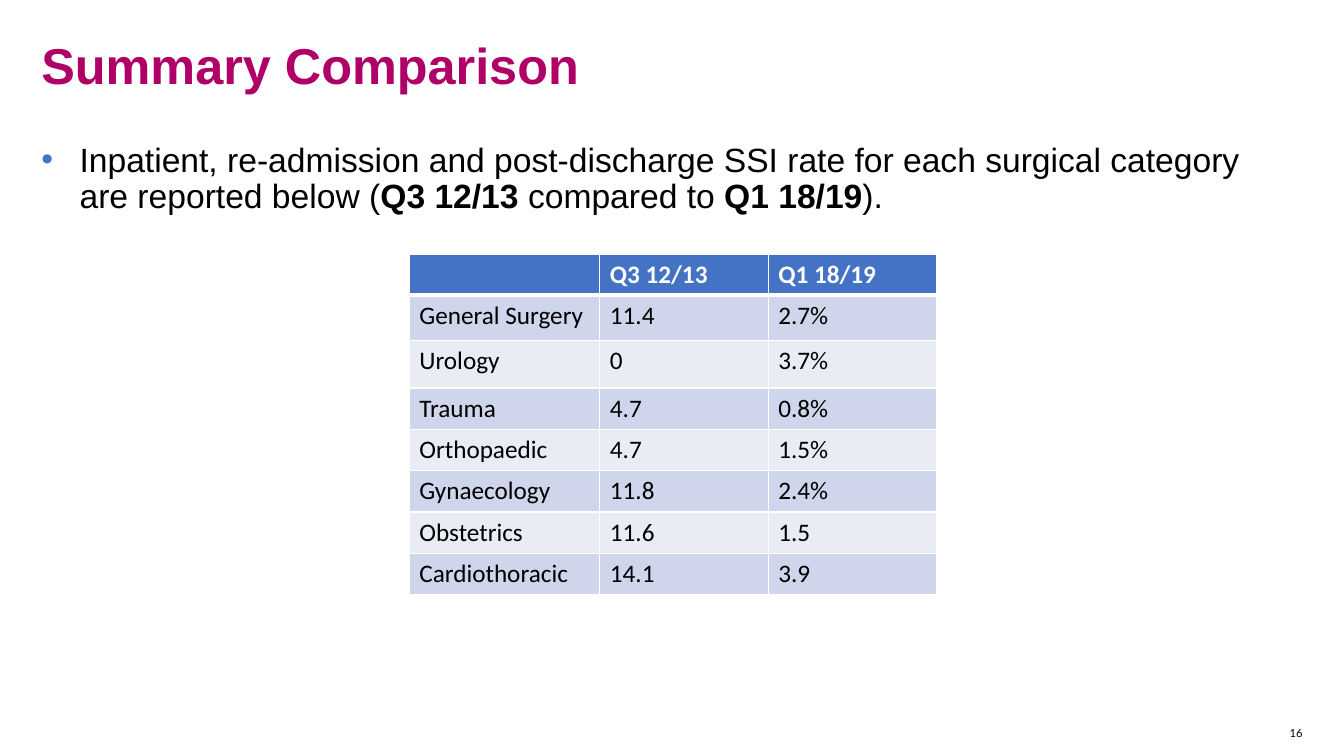
import lxml.etree
import pptx
import pptx.dml.color
import pptx.enum.text
import pptx.oxml.ns
import pptx.util

COLORS = {
    "title": "AE0067",
    "text": "000000",
    "accent": "4472C4",
    "white": "FFFFFF",
    "odd_row": "CFD5EA",
    "even_row": "E9EBF5",
}
TITLE_FONT = {"name": "Arial", "size": pptx.util.Pt(36), "bold": True}
BODY_FONT = {"name": "Arial", "size": pptx.util.Pt(24), "bold": False}
CELL_FONT = {"name": "Calibri", "size": pptx.util.Pt(18), "bold": False}
NUMBER_FONT = {"name": "Lato", "size": pptx.util.Pt(8), "bold": False}

SUMMARY = [
    ("Inpatient, re-admission and post-discharge SSI rate for each surgical category "
     "are reported below (", False),
    ("Q3 12/13 ", True),
    ("compared to ", False),
    ("Q1 18/19", True),
    (").", False),
]
RATES = [
    ("", "Q3 12/13", "Q1 18/19"),
    ("General Surgery", "11.4", "2.7%"),
    ("Urology", "0", "3.7%"),
    ("Trauma", "4.7", "0.8%"),
    ("Orthopaedic", "4.7", "1.5%"),
    ("Gynaecology", "11.8", "2.4%"),
    ("Obstetrics", "11.6", "1.5"),
    ("Cardiothoracic", "14.1", "3.9"),
]
COLUMN_WIDTHS = [1.89, 1.67, 1.67]
ROW_HEIGHTS = [0.41, 0.45, 0.47] + [0.41] * 5


def rgb(name):
    """Return the named colour."""
    return pptx.dml.color.RGBColor.from_string(COLORS[name])


def style_font(font, values, color):
    """Apply a dict of font values and a colour."""
    for attribute, value in values.items():
        setattr(font, attribute, value)
    font.color.rgb = rgb(color)


def inches(box):
    """Convert a box in inches to lengths."""
    return [pptx.util.Inches(value) for value in box]


def prepare_text(shape, box, right_inset=0):
    """Place a text shape and return its first paragraph."""
    shape.left, shape.top, shape.width, shape.height = inches(box)
    frame_format = {
        "margin_left": 0,
        "margin_top": 0,
        "margin_right": pptx.util.Inches(right_inset),
        "margin_bottom": 0,
        "word_wrap": True,
        "auto_size": pptx.enum.text.MSO_AUTO_SIZE.NONE,
        "vertical_anchor": pptx.enum.text.MSO_ANCHOR.TOP,
    }
    for attribute, value in frame_format.items():
        setattr(shape.text_frame, attribute, value)
    return shape.text_frame.paragraphs[0]


def add_child(parent, tag, **attributes):
    """Append a drawing element with the given attributes."""
    child = lxml.etree.SubElement(parent, pptx.oxml.ns.qn(tag))
    for name, value in attributes.items():
        child.set(name, value)
    return child


def add_title(slide, box):
    """Fill the title placeholder."""
    paragraph = prepare_text(slide.shapes.title, box)
    paragraph.alignment = pptx.enum.text.PP_ALIGN.LEFT
    paragraph.line_spacing = 0.9
    run = paragraph.add_run()
    run.text = "Summary Comparison"
    style_font(run.font, TITLE_FONT, "title")


def add_summary(slide, box):
    """Fill the body placeholder with the bulleted summary."""
    paragraph = prepare_text(slide.placeholders[1], box, right_inset=0.2)
    properties = paragraph._p.get_or_add_pPr()
    indent = pptx.util.Inches(0.38)
    properties.set("marL", str(indent))
    properties.set("indent", str(-indent))
    bullet_color = add_child(properties, "a:buClr")
    add_child(bullet_color, "a:srgbClr", val=COLORS["accent"])
    add_child(properties, "a:buFont", typeface="Arial")
    add_child(properties, "a:buChar", char="•")
    paragraph.line_spacing = 0.9
    paragraph.space_before = pptx.util.Pt(0)
    for text, bold in SUMMARY:
        run = paragraph.add_run()
        run.text = text
        style_font(run.font, {**BODY_FONT, "bold": bold}, "text")


def add_borders(cell, row_index):
    """Draw white cell borders, thicker under the header row."""
    widths = {
        "a:lnL": 1,
        "a:lnR": 1,
        "a:lnT": 3 if row_index == 1 else 1,
        "a:lnB": 3 if row_index == 0 else 1,
    }
    for tag, width in widths.items():
        line = add_child(cell._tc.get_or_add_tcPr(), tag, w=str(pptx.util.Pt(width)))
        add_child(add_child(line, "a:solidFill"), "a:srgbClr", val=COLORS["white"])


def add_rates(slide, left, top):
    """Add the table of infection rates."""
    box = inches((left, top, sum(COLUMN_WIDTHS), sum(ROW_HEIGHTS)))
    table = slide.shapes.add_table(len(RATES), len(COLUMN_WIDTHS), *box).table
    for column, width in zip(table.columns, COLUMN_WIDTHS):
        column.width = pptx.util.Inches(width)
    for row_index, (row, height) in enumerate(zip(table.rows, ROW_HEIGHTS)):
        row.height = pptx.util.Inches(height)
        header = row_index == 0
        fill = "accent" if header else "odd_row" if row_index % 2 else "even_row"
        for cell, text in zip(row.cells, RATES[row_index]):
            add_borders(cell, row_index)
            cell.fill.solid()
            cell.fill.fore_color.rgb = rgb(fill)
            cell.text = text
            color = "white" if header else "text"
            for run in cell.text_frame.paragraphs[0].runs:
                style_font(run.font, {**CELL_FONT, "bold": header}, color)


def add_slide_number(slide, box):
    """Add the page number at the lower right."""
    paragraph = prepare_text(slide.shapes.add_textbox(*inches(box)), box)
    paragraph.alignment = pptx.enum.text.PP_ALIGN.RIGHT
    run = paragraph.add_run()
    run.text = "16"
    style_font(run.font, NUMBER_FONT, "text")


def main():
    """Build and save the slide."""
    presentation = pptx.Presentation()
    presentation.slide_width = pptx.util.Inches(13.33)
    presentation.slide_height = pptx.util.Inches(7.5)
    slide = presentation.slides.add_slide(presentation.slide_layouts[1])
    add_title(slide, (0.41, 0.41, 11.62, 0.9))
    add_summary(slide, (0.41, 1.42, 12.5, 5.42))
    add_rates(slide, 4.06, 2.52)
    add_slide_number(slide, (12.68, 7.21, 0.24, 0.13))
    presentation.save("out.pptx")


if __name__ == "__main__":
    main()
